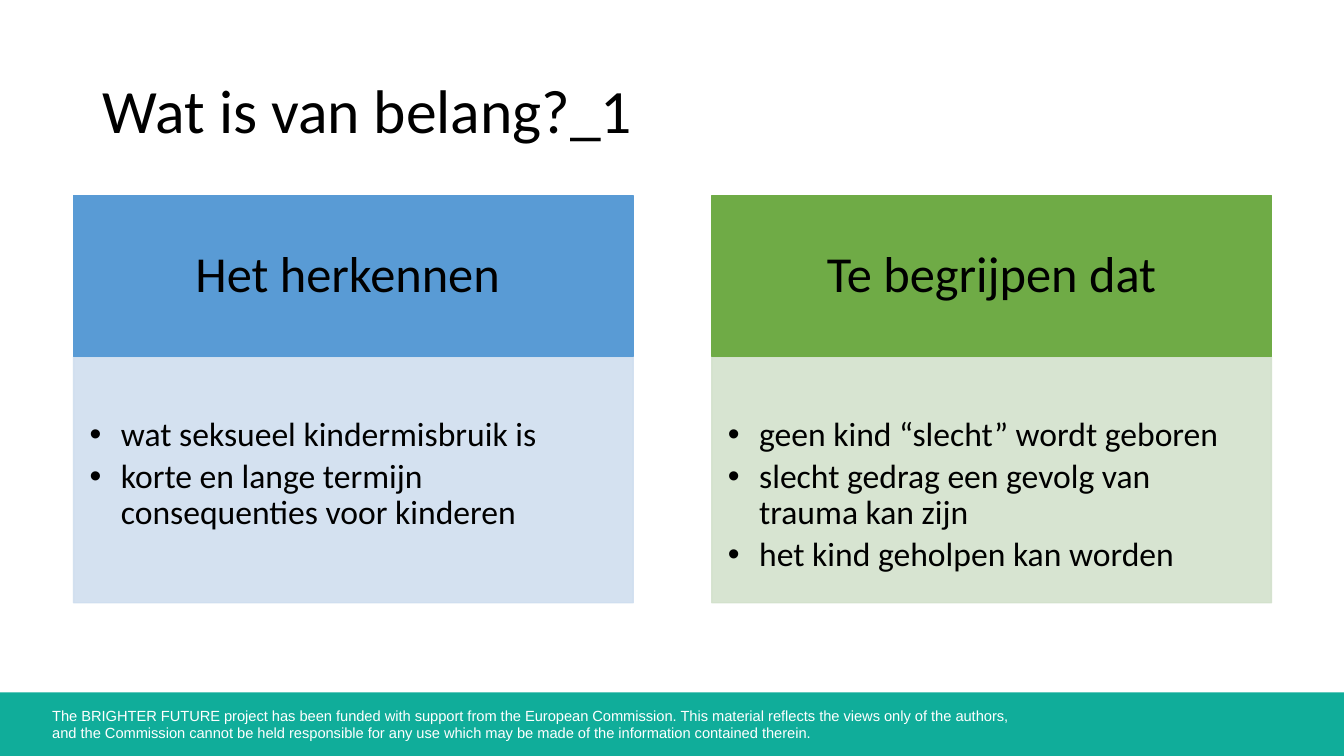
import pptx
import pptx.dml.color
import pptx.enum.shapes
import pptx.enum.text
import pptx.oxml
import pptx.oxml.ns
import pptx.util

Inches = pptx.util.Inches
Pt = pptx.util.Pt
RGBColor = pptx.dml.color.RGBColor
Align = pptx.enum.text.PP_ALIGN
Anchor = pptx.enum.text.MSO_ANCHOR

BLACK = RGBColor(0x00, 0x00, 0x00)
WHITE = RGBColor(0xFF, 0xFF, 0xFF)
TEAL = RGBColor(0x10, 0xAD, 0x9A)
BLUE = RGBColor(0x59, 0x9B, 0xD5)
PALE_BLUE = RGBColor(0xCF, 0xDE, 0xEF)
GREEN = RGBColor(0x6F, 0xAB, 0x46)
PALE_GREEN = RGBColor(0xD3, 0xE1, 0xCC)

TOPICS = [
    ("Het herkennen ", BLUE, PALE_BLUE, [
        "wat seksueel kindermisbruik is",
        "korte en lange termijn consequenties voor kinderen",
    ]),
    ("Te begrijpen dat", GREEN, PALE_GREEN, [
        "geen kind “slecht” wordt geboren",
        "slecht gedrag een gevolg van trauma kan zijn",
        "het kind geholpen kan worden",
    ]),
]
NOTICE = (
    "The BRIGHTER FUTURE project has been funded with support from the European "
    "Commission. This material reflects the views only of the authors, \v"
    "and the Commission cannot be held responsible for any use which may be made "
    "of the information contained therein."
)


class Page:
    def __init__(self, deck):
        self.font = "Calibri"
        self.slide = deck.slides.add_slide(deck.slide_layouts[3])
        self.shapes = self.slide.shapes

    def apply(self, item, style):
        for name, value in style.items():
            setattr(item, name, value)

    def place(self, shape, box):
        names = ("left", "top", "width", "height")
        self.apply(shape, dict(zip(names, map(Inches, box))))

    def paint(self, shape, color, edge=True, alpha=None):
        shape.fill.solid()
        shape.fill.fore_color.rgb = color
        if edge:
            shape.line.color.rgb = color
            shape.line.width = Pt(1)
        else:
            shape.line.fill.background()
        if alpha:
            space = pptx.oxml.ns.nsdecls("a")
            for node in shape._element.spPr.iter(pptx.oxml.ns.qn("a:srgbClr")):
                node.append(pptx.oxml.parse_xml(f'<a:alpha {space} val="{alpha * 1000}"/>'))

    def label(self, shape, lines, size, insets=(0.1, 0.05, 0.1, 0.05), anchor=Anchor.TOP,
              align=Align.LEFT, color=BLACK, font=None, space=0.9, bullet=False):
        frame = shape.text_frame
        sides = ("margin_left", "margin_top", "margin_right", "margin_bottom")
        self.apply(frame, dict(zip(sides, map(Inches, insets))))
        self.apply(frame, {"word_wrap": True, "vertical_anchor": anchor,
                           "auto_size": pptx.enum.text.MSO_AUTO_SIZE.NONE})
        frame.text = "\n".join(lines)
        for i, para in enumerate(frame.paragraphs):
            if bullet:
                self.mark(para)
            self.apply(para, {"alignment": align, "line_spacing": space,
                              "space_before": Pt(4.2 if bullet and i else 0)})
            for run in para.runs:
                self.apply(run.font, {"name": font or self.font, "size": Pt(size)})
                run.font.color.rgb = color

    def mark(self, para):
        props = para._p.get_or_add_pPr()
        props.set("marL", str(Inches(0.31)))
        props.set("indent", str(-Inches(0.31)))
        space = pptx.oxml.ns.nsdecls("a")
        for xml in (f'<a:buClr {space}><a:srgbClr val="{BLACK}"/></a:buClr>',
                    f'<a:buFont {space} typeface="Arial"/>',
                    f'<a:buChar {space} char="•"/>'):
            props.append(pptx.oxml.parse_xml(xml))

    def title(self, text, box):
        shape = self.shapes.title
        self.place(shape, box)
        self.label(shape, [text], 44, anchor=Anchor.MIDDLE)

    def rect(self, box, color, edge=True):
        kind = pptx.enum.shapes.MSO_SHAPE.RECTANGLE
        shape = self.shapes.add_shape(kind, *map(Inches, box))
        shape.shadow.inherit = False
        self.paint(shape, color, edge)
        return shape

    def head(self, text, box, color):
        shape = self.rect(box, color)
        self.label(shape, [text], 36, (0.35, 0.2, 0.35, 0.2), Anchor.MIDDLE, Align.CENTER)

    def list(self, slot, lines, box, color):
        shape = self.slide.placeholders[slot]
        self.place(shape, box)
        self.paint(shape, color, alpha=89)
        self.label(shape, lines, 24, (0.16, 0.6, 0.22, 0.24), bullet=True)

    def note(self, text, box):
        shape = self.shapes.add_textbox(*map(Inches, box))
        self.label(shape, [text], 10.5, color=WHITE, font="Arial", space=1.0)


def main():
    deck = pptx.Presentation()
    deck.slide_width, deck.slide_height = Inches(13.33), Inches(7.5)
    page = Page(deck)
    page.rect((0, 6.87, 13.33, 0.63), TEAL, edge=False)
    page.note(NOTICE, (0.42, 6.96, 10, 0.45))
    page.title("Wat is van belang?_1", (0.92, 0.4, 11.5, 1.45))
    for i, (name, dark, pale, lines) in enumerate(TOPICS):
        left = 0.73 + 6.33 * i
        page.head(name, (left, 1.94, 5.55, 1.6), dark)
        page.list(i + 1, lines, (left, 3.54, 5.55, 2.44), pale)
    deck.save("out.pptx")


if __name__ == "__main__":
    main()
